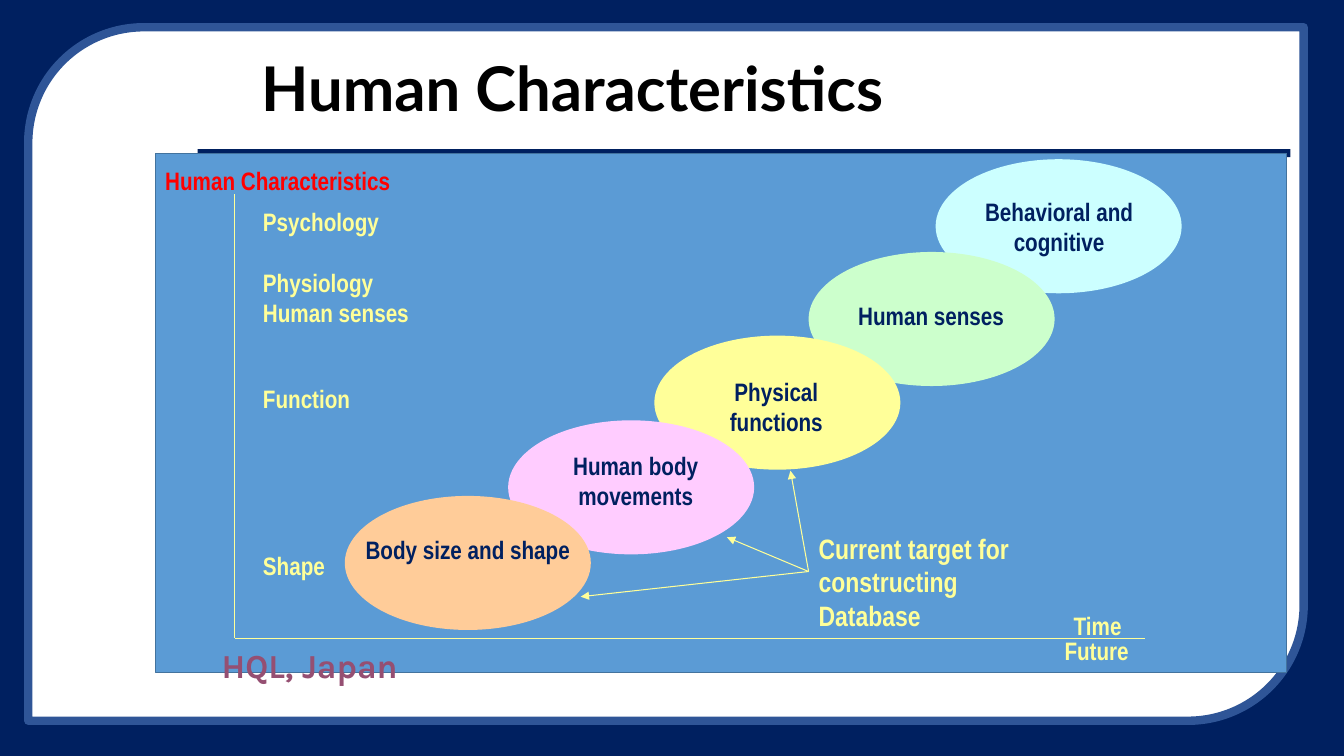
"""Build the Human Characteristics slide."""
from lxml.etree import SubElement as Sub
from pptx import Presentation
from pptx.dml.color import RGBColor
from pptx.enum.shapes import MSO_CONNECTOR as Conn, MSO_SHAPE as Kind
from pptx.enum.text import MSO_ANCHOR as Anchor, MSO_AUTO_SIZE as Auto, PP_ALIGN as Align
from pptx.oxml.ns import qn
from pptx.util import Inches, Pt

NAVY = RGBColor(0x00, 0x20, 0x60)
WHITE = RGBColor(0xFF, 0xFF, 0xFF)
BLACK = RGBColor(0x00, 0x00, 0x00)
RED = RGBColor(0xFF, 0x00, 0x00)
FRAME = RGBColor(0x2F, 0x55, 0x97)
BLUE = RGBColor(0x5B, 0x9B, 0xD5)
EDGE = RGBColor(0x43, 0x73, 0x9E)
CYAN = RGBColor(0xCC, 0xFF, 0xFF)
GREEN = RGBColor(0xCC, 0xFF, 0xCC)
YELLOW = RGBColor(0xFF, 0xFF, 0x99)
PINK = RGBColor(0xFF, 0xCC, 0xFF)
ORANGE = RGBColor(0xFF, 0xCC, 0x99)
PLUM = RGBColor(0x95, 0x4F, 0x72)
NARROW = "Arial Narrow"

STAGES = [
    (9.28, 1.58, CYAN),
    (8.02, 2.5, GREEN),
    (6.49, 3.33, YELLOW),
    (5.04, 4.17, PINK),
    (3.42, 4.92, ORANGE),
]
NAMES = [
    ("Body size and shape", 3.51, 5.25, 2.26, 0.4, True),
    ("Human body movements", 5.13, 4.42, 2.35, 0.7, True),
    ("Physical\nfunctions", 7.14, 3.68, 1.12, 0.7, False),
    ("Human senses", 8.41, 2.93, 1.65, 0.4, False),
    ("Behavioral and\ncognitive", 9.67, 1.9, 1.67, 0.7, False),
]
LABELS = [
    ("Future", 10.46, 6.25, 0.84),
    ("Time", 10.55, 6.01, 0.68),
    ("Shape", 2.51, 5.41, 0.82),
    ("Function", 2.51, 3.75, 1.07),
]
ORIGIN = (2.33, 6.33)
TARGET = (8.02, 5.67)


def add_form(slide, kind, left, top, width, height, fill, edge=None, weight=1):
    """Add a filled preset shape, outlined if an edge colour is given."""
    form = slide.shapes.add_shape(
        kind, Inches(left), Inches(top), Inches(width), Inches(height))
    form.shadow.inherit = False
    form.fill.solid()
    form.fill.fore_color.rgb = fill
    if edge is None:
        form.line.fill.background()
    else:
        form.line.color.rgb = edge
        form.line.width = Pt(weight)
    return form


def style(frame, size, color, font, align):
    """Format every run in a text frame."""
    for para in frame.paragraphs:
        para.alignment = align
        for run in para.runs:
            run.font.size = Pt(size)
            run.font.bold = True
            run.font.name = font
            run.font.color.rgb = color


def add_text(slide, text, left, top, width, height=0.4, size=18, color=YELLOW,
             font=NARROW, align=Align.LEFT, wrap=False):
    """Add a bold text box."""
    box = slide.shapes.add_textbox(
        Inches(left), Inches(top), Inches(width), Inches(height))
    frame = box.text_frame
    frame.text = text
    frame.word_wrap = wrap
    frame.auto_size = Auto.SHAPE_TO_FIT_TEXT
    style(frame, size, color, font, align)
    return frame


def add_line(slide, start, end, arrow=False):
    """Add a thin line, with an arrowhead at its end if asked."""
    line = slide.shapes.add_connector(
        Conn.STRAIGHT, *(Inches(value) for value in start + end))
    line.line.color.rgb = YELLOW
    line.line.width = Pt(0.75)
    if arrow:
        Sub(line.line._get_or_add_ln(), qn("a:tailEnd"), type="triangle")
    Sub(line.element.spPr, qn("a:effectLst"))


def set_title(slide, text):
    """Place and format the title above the backdrop."""
    title = slide.shapes.title
    title.element.getparent().append(title.element)
    title.left, title.top = Inches(2.49), Inches(0.28)
    title.width, title.height = Inches(9.21), Inches(1.25)
    frame = title.text_frame
    frame.text = text
    frame.word_wrap = True
    frame.auto_size = Auto.NONE
    frame.vertical_anchor = Anchor.MIDDLE
    frame.paragraphs[0].line_spacing = 0.9
    style(frame, 44, BLACK, "Lato", Align.LEFT)


def add_base(slide):
    """Add the background, frame, rule and chart panel."""
    slide.background.fill.solid()
    slide.background.fill.fore_color.rgb = NAVY
    frame = add_form(slide, Kind.ROUND_2_DIAG_RECTANGLE,
                     0.28, 0.27, 12.65, 6.88, WHITE, FRAME, 6)
    frame.rotation = 180
    add_form(slide, Kind.RECTANGLE, 1.96, 1.48, 10.84, 0.08, NAVY)
    add_form(slide, Kind.RECTANGLE, 1.54, 1.52, 11.22, 5.15, BLUE, EDGE)


def main():
    """Build and save the slide."""
    deck = Presentation()
    deck.slide_width, deck.slide_height = Inches(13.33), Inches(7.5)
    slide = deck.slides.add_slide(deck.slide_layouts[5])
    add_base(slide)
    set_title(slide, "Human Characteristics")

    for left, top, fill in STAGES:
        add_form(slide, Kind.OVAL, left, top, 2.44, 1.33, fill)
    for end in [(11.36, 6.33), (2.33, 1.92)]:
        add_line(slide, ORIGIN, end)

    for label in LABELS:
        add_text(slide, *label)
    add_text(slide, "Human Characteristics", 1.54, 1.59, 2.44, color=RED)
    levels = add_text(slide, "Psychology\nPhysiology\nHuman senses",
                      2.51, 2, 1.65, 1.3)
    levels.paragraphs[1].space_before = Pt(21.5)

    for text, left, top, width, height, wrap in NAMES:
        add_text(slide, text, left, top, width, height,
                 color=NAVY, align=Align.CENTER, wrap=wrap)
    add_text(slide, "Current target for\nconstructing Database",
             8.02, 5.22, 2.25, 1.1, size=20, wrap=True)
    for end in [(5.76, 5.92), (7.21, 5.33), (7.84, 4.67)]:
        add_line(slide, TARGET, end, arrow=True)
    add_text(slide, "HQL, Japan", 2.1, 6.35, 3.67, 0.5, size=24,
             color=PLUM, font="Karla", wrap=True)
    deck.save("out.pptx")


if __name__ == "__main__":
    main()
